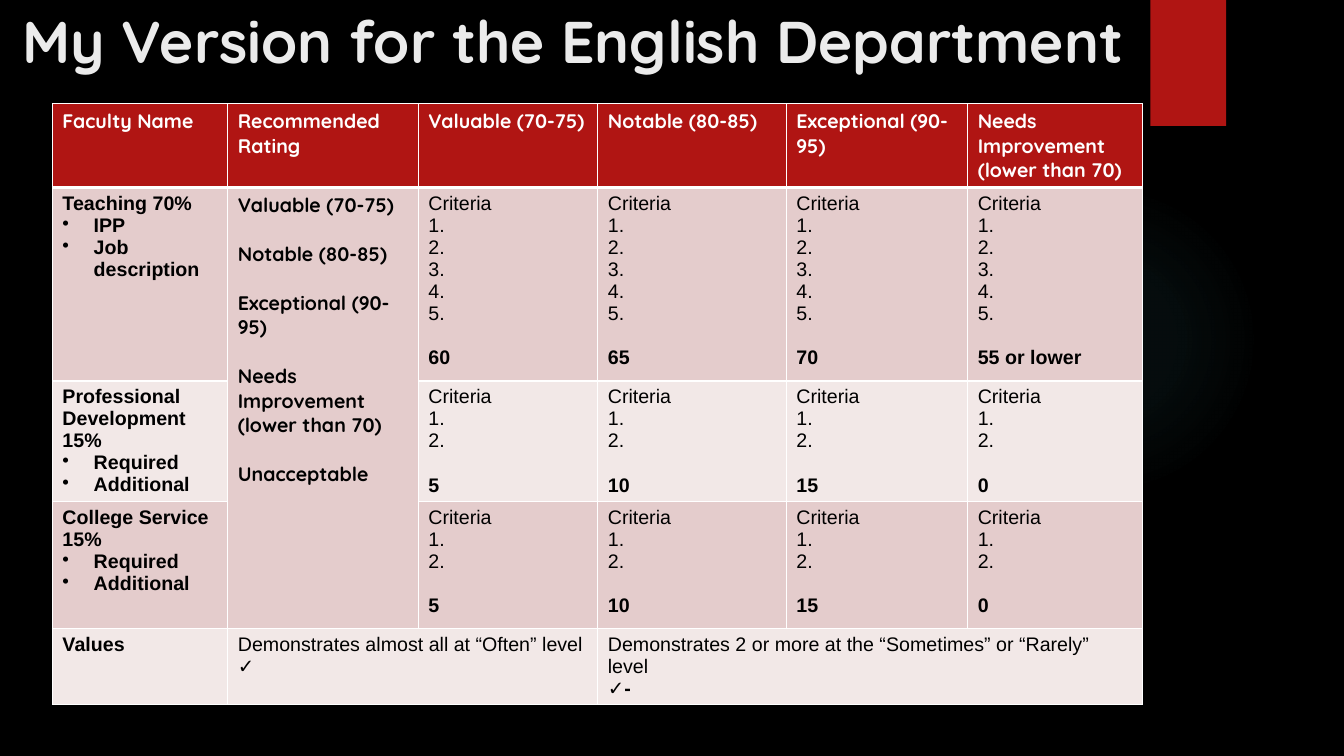
import pptx
import pptx.dml.color
import pptx.enum.shapes
import pptx.enum.text
import pptx.oxml
import pptx.oxml.ns
import pptx.util

RGB = pptx.dml.color.RGBColor.from_string
NS = pptx.oxml.ns.nsdecls("a")
THEME = {
    "back": "000000", "red": "B01513", "white": "FFFFFF", "title": "EBEBEB",
    "ink": "000000", "bands": ["E4CCCC", "F2E8E7"], "glow": "50B9C1",
    "display": "Quicksand", "body": "Arial", "title_size": 42, "size": 14,
    "gaps": {"Quicksand": 17.5, "Arial": 16},
}

prs = pptx.Presentation()
prs.slide_width = pptx.util.Inches(13.33)
prs.slide_height = pptx.util.Inches(7.5)


def x(share):
    return round(prs.slide_width * share / 100)


def y(share):
    return round(prs.slide_height * share / 100)


s = prs.slides.add_slide(prs.slide_layouts[5])
s.background.fill.solid()
s.background.fill.fore_color.rgb = RGB(THEME["back"])

shape_kinds = pptx.enum.shapes.MSO_SHAPE
glow = s.shapes.add_shape(shape_kinds.OVAL, x(70.6), y(24.4), x(23.1), x(23.1))
glow.shadow.inherit = False
glow.line.fill.background()
stops = "".join(
    f'<a:gs pos="{pos}000"><a:srgbClr val="{THEME["glow"]}">'
    f'<a:alpha val="{alpha}000"/></a:srgbClr></a:gs>'
    for pos, alpha in [(0, 7), (36, 6), (69, 0), (100, 0)])
glow._element.spPr.find(pptx.oxml.ns.qn("a:prstGeom")).addnext(pptx.oxml.parse_xml(
    f'<a:gradFill {NS}><a:gsLst>{stops}</a:gsLst><a:path path="circle">'
    '<a:fillToRect l="50000" t="50000" r="50000" b="50000"/></a:path></a:gradFill>'))

ribbon = s.shapes.add_shape(shape_kinds.RECTANGLE, x(85.6), 0, x(5.63), y(16.67))
ribbon.shadow.inherit = False
ribbon.fill.solid()
ribbon.fill.fore_color.rgb = RGB(THEME["red"])
ribbon.line.fill.background()

title = s.shapes.title
s.shapes._spTree.append(title._element)
title.left, title.top, title.width, title.height = x(0.9), 0, x(96.6), y(12.3)
tf = title.text_frame
tf.text = "My Version for the English Department"
tf.auto_size = pptx.enum.text.MSO_AUTO_SIZE.NONE
tf.vertical_anchor = pptx.enum.text.MSO_ANCHOR.TOP
p = tf.paragraphs[0]
p.alignment = pptx.enum.text.PP_ALIGN.LEFT
font = p.runs[0].font
font.name, font.size, font.bold = THEME["display"], pptx.util.Pt(THEME["title_size"]), True
font.color.rgb = RGB(THEME["title"])

ratings = ["Valuable (70-75)", "Notable (80-85)", "Exceptional (90-95)",
           "Needs Improvement\n(lower than 70)"]
areas = [
    ("Teaching 70%\n•IPP\n•Job description", 5, ["60", "65", "70", "55 or lower"]),
    ("Professional Development 15%\n•Required\n•Additional", 2, ["5", "10", "15", "0"]),
    ("College Service 15%\n•Required\n•Additional", 2, ["5", "10", "15", "0"]),
]
rows = [["Faculty Name", "Recommended Rating"] + ratings]
for area, count, scores in areas:
    criteria = "\n".join(["Criteria"] + [f"{n}." for n in range(1, count + 1)])
    rows.append([area, ""] + [f"{criteria}\n\n{score}" for score in scores])
rows[1][1] = "\n\n".join(ratings + ["Unacceptable"])
rows.append(["Values", "Demonstrates almost all at “Often” level\n✓", "",
             "Demonstrates 2 or more at the “Sometimes” or “Rarely” level\n✓-", "", ""])

col_shares = [13.05, 14.18, 13.35, 14.03, 13.5, 12.98]
row_shares = [10.4, 25.6, 15.47, 16.8, 9.07]
table = s.shapes.add_table(len(rows), len(col_shares), x(3.9), y(13.73),
                           x(sum(col_shares)), y(sum(row_shares))).table
table.horz_banding = False
for col, share in zip(table.columns, col_shares):
    col.width = x(share)
for row, share in zip(table.rows, row_shares):
    row.height = y(share)
for first, last in [((1, 1), (3, 1)), ((4, 1), (4, 2)), ((4, 3), (4, 5))]:
    table.cell(*first).merge(table.cell(*last))

for i, row in enumerate(rows):
    for j, text in enumerate(row):
        cell = table.cell(i, j)
        tcPr = cell._tc.get_or_add_tcPr()
        for side in "LRTB":
            heavy = (i, side) in [(0, "B"), (1, "T")]
            tcPr.append(pptx.oxml.parse_xml(
                f'<a:ln{side} {NS} w="{38100 if heavy else 12700}"><a:solidFill>'
                f'<a:srgbClr val="{THEME["white"]}"/></a:solidFill></a:ln{side}>'))
        cell.fill.solid()
        cell.fill.fore_color.rgb = RGB(THEME["bands"][(i - 1) % 2] if i else THEME["red"])
        if not text:
            continue
        face = THEME["display"] if i == 0 or (i, j) == (1, 1) else THEME["body"]
        lines = [(line, n == 0 and b > 0) for b, block in enumerate(text.split("\n\n"))
                 for n, line in enumerate(block.split("\n"))]
        tf = cell.text_frame
        tf.text = "\n".join(line.lstrip("•") for line, gap in lines)
        for k, (p, (line, gap)) in enumerate(zip(tf.paragraphs, lines)):
            if gap:
                p.space_before = pptx.util.Pt(THEME["gaps"][face])
            if line.startswith("•"):
                pPr = p._p.get_or_add_pPr()
                pPr.set("marL", str(pptx.util.Inches(0.31)))
                pPr.set("indent", str(pptx.util.Inches(-0.31)))
                pPr.append(pptx.oxml.parse_xml(f'<a:buChar {NS} char="•"/>'))
            font = p.runs[0].font
            font.name, font.size = face, pptx.util.Pt(THEME["size"])
            font.bold = j == 0 or face == THEME["display"] or k == len(lines) - 1
            font.color.rgb = RGB(THEME["ink"] if i else THEME["white"])

prs.save("out.pptx")
